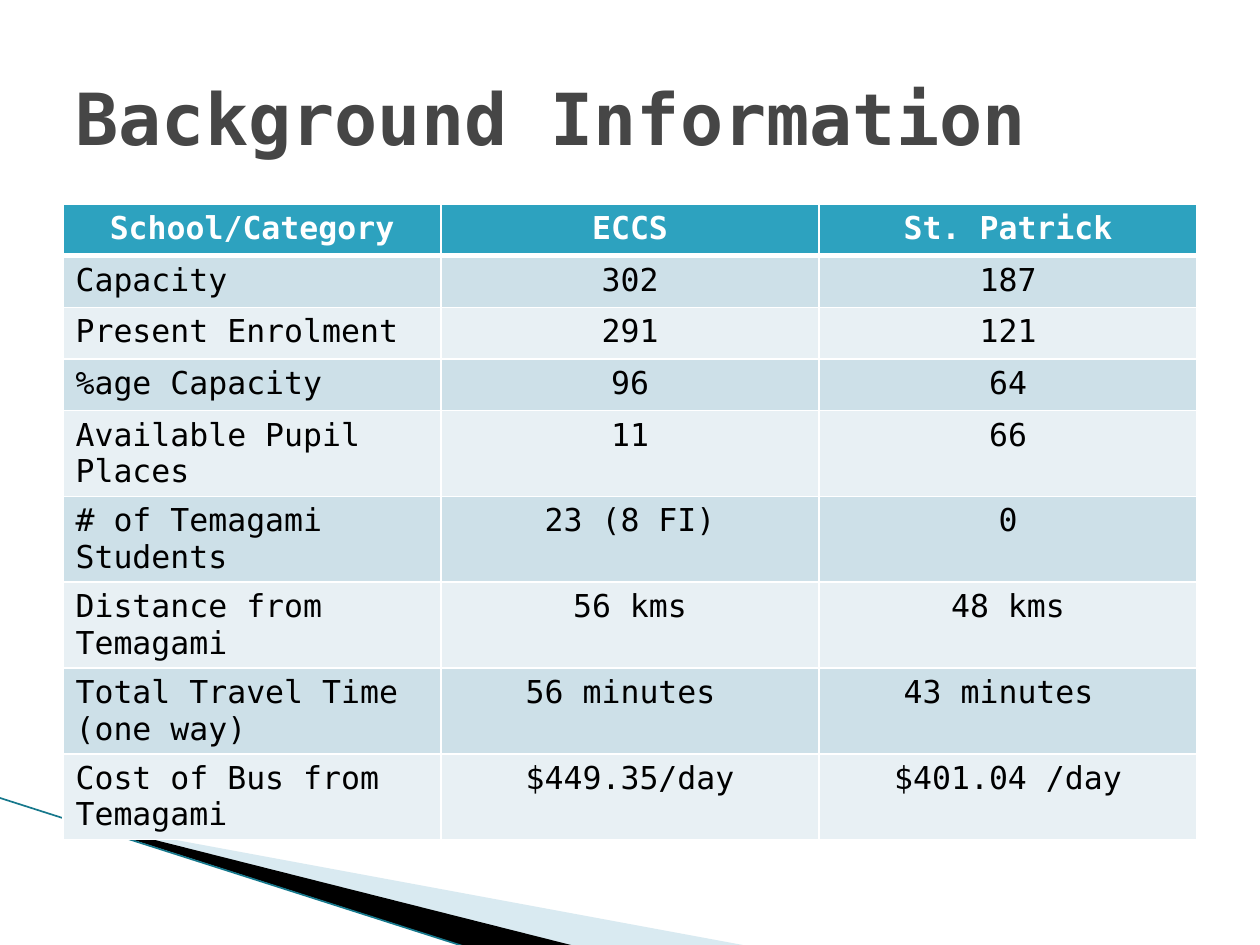
from lxml.etree import SubElement
from pptx import Presentation
from pptx.dml.color import RGBColor
from pptx.enum.shapes import MSO_CONNECTOR
from pptx.enum.text import MSO_ANCHOR, PP_ALIGN
from pptx.oxml.ns import qn
from pptx.util import Inches, Pt

FONT = "DejaVu Sans Mono"
WHITE = RGBColor(0xFF, 0xFF, 0xFF)
BLACK = RGBColor(0x00, 0x00, 0x00)
GREY = RGBColor(0x46, 0x46, 0x46)
TEAL = RGBColor(0x2D, 0xA2, 0xBF)
DARK_TEAL = RGBColor(0x16, 0x78, 0x8C)
PALE_BLUE = RGBColor(0xA0, 0xCB, 0xDC)
BAND_DARK = RGBColor(0xCD, 0xE0, 0xE8)
BAND_LIGHT = RGBColor(0xE8, 0xF0, 0xF4)

ROWS = [
    ("School/Category", "ECCS", "St. Patrick"),
    ("Capacity", "302", "187"),
    ("Present Enrolment", "291", "121"),
    ("%age Capacity", "96", "64"),
    ("Available Pupil Places", "11", "66"),
    ("# of Temagami Students", "23 (8 FI)", "0"),
    ("Distance from Temagami", "56 kms", "48 kms"),
    ("Total Travel Time (one way)", "56 minutes ", "43 minutes "),
    ("Cost of Bus from Temagami", "$449.35/day", "$401.04 /day"),
]
FIRST_TALL_ROW = 4  # from here on the labels take two lines


def add_run(para, text, size, color, bold):
    span = para.add_run()
    span.text = text
    span.font.name = FONT
    span.font.size = Pt(size)
    span.font.bold = bold
    span.font.color.rgb = color


def set_border(cell, side, width):
    line = SubElement(cell._tc.get_or_add_tcPr(), qn(f"a:{side}"), w=str(Pt(width)))
    fill = SubElement(line, qn("a:solidFill"))
    SubElement(fill, qn("a:srgbClr"), val=str(WHITE))


deck = Presentation()
deck.slide_width = Inches(10)
deck.slide_height = Inches(7.5)
page = deck.slides.add_slide(deck.slide_layouts[5])

# Decorative wedges at the bottom
wedges = [
    (PALE_BLUE, 40, [(0.55, 6.51), (5.95, 7.51), (4.56, 7.51), (0.55, 6.5)]),
    (BLACK, 100, [(0.53, 6.49), (4.57, 7.51), (3.72, 7.52), (0.54, 6.5)]),
]
for color, opacity, points in wedges:
    corners = [(Inches(x), Inches(y)) for x, y in points]
    builder = page.shapes.build_freeform(*corners[0])
    builder.add_line_segments(corners[1:])
    wedge = builder.convert_to_shape()
    wedge.shadow.inherit = False
    wedge.fill.solid()
    wedge.fill.fore_color.rgb = color
    wedge.line.fill.background()
    if opacity < 100:
        tint = wedge.fill._xPr.find(qn("a:solidFill"))[0]
        SubElement(tint, qn("a:alpha"), val=str(opacity * 1000))

# Thin line along the wedges
edge = page.shapes.add_connector(
    MSO_CONNECTOR.STRAIGHT, Inches(-0.01), Inches(6.33), Inches(3.71), Inches(7.52))
edge.line.color.rgb = DARK_TEAL
edge.line.width = Pt(0.95)
SubElement(edge._element.spPr, qn("a:effectLst"))

# Title
title = page.shapes.title
title.left, title.top = Inches(0.5), Inches(0.3)
title.width, title.height = Inches(9), Inches(1.25)
title.text_frame.word_wrap = True
title.text_frame.vertical_anchor = MSO_ANCHOR.MIDDLE
para = title.text_frame.paragraphs[0]
para.alignment = PP_ALIGN.LEFT
add_run(para, "Background Information", 41, GREY, True)

# School comparison table
table = page.shapes.add_table(
    len(ROWS), 3, Inches(0.5), Inches(1.62), Inches(9), Inches(4.83)).table
for r, texts in enumerate(ROWS):
    header = r == 0
    table.rows[r].height = Inches(0.41 if r < FIRST_TALL_ROW else 0.68)
    for c, text in enumerate(texts):
        cell = table.cell(r, c)
        for side in ("lnL", "lnR", "lnT", "lnB"):
            thick = (header and side == "lnB") or (r == 1 and side == "lnT")
            set_border(cell, side, 3 if thick else 1)
        cell.fill.solid()
        cell.fill.fore_color.rgb = TEAL if header else BAND_DARK if r % 2 else BAND_LIGHT
        para = cell.text_frame.paragraphs[0]
        para.alignment = PP_ALIGN.CENTER if header or c else PP_ALIGN.LEFT
        add_run(para, text, 18, WHITE if header else BLACK, header)

deck.save("out.pptx")
